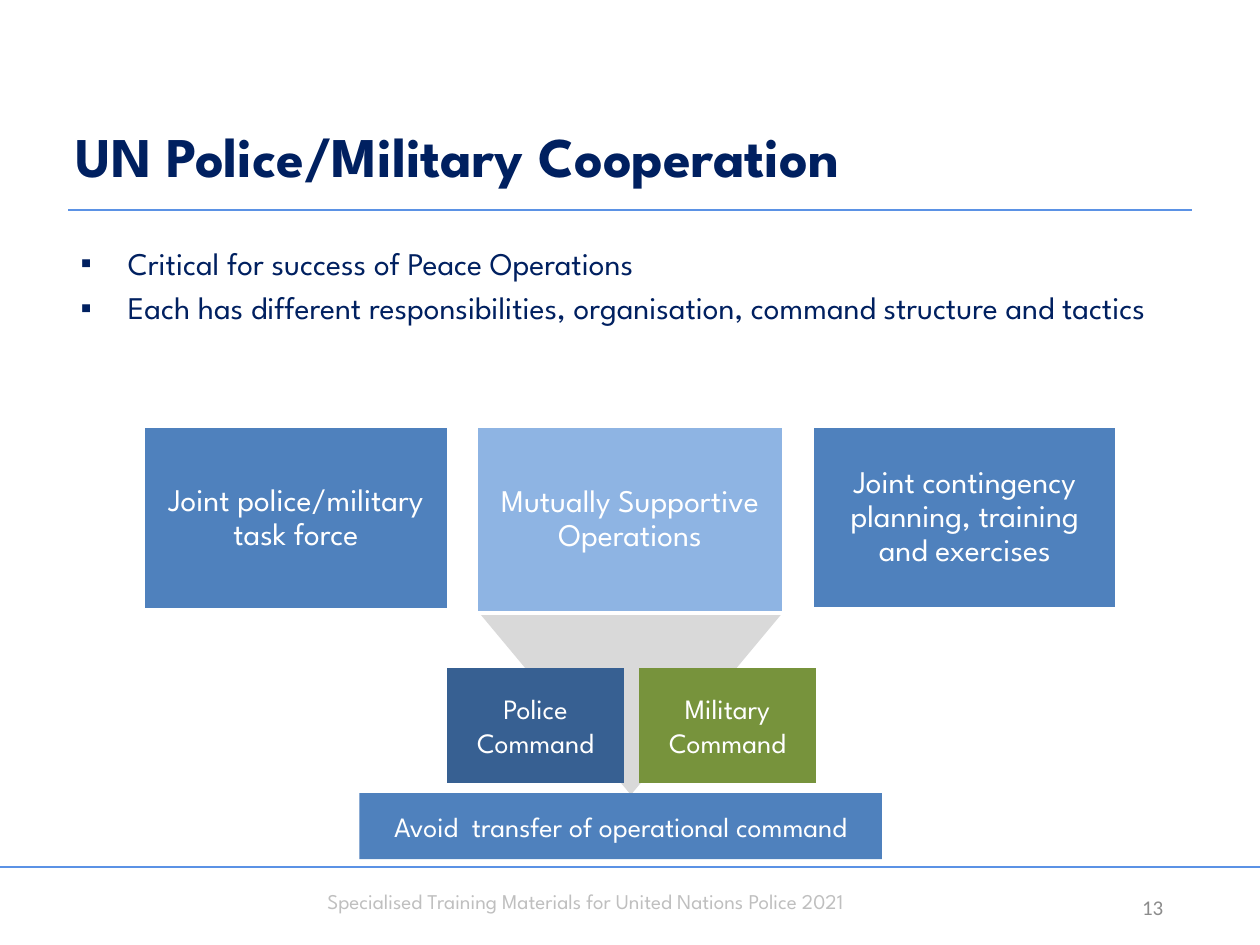
from dataclasses import dataclass

from lxml import etree
from pptx import Presentation
from pptx.dml.color import RGBColor
from pptx.enum.shapes import MSO_CONNECTOR, MSO_SHAPE
from pptx.enum.text import MSO_ANCHOR, PP_ALIGN
from pptx.oxml.ns import qn
from pptx.util import Pt

RECT, TRIANGLE = MSO_SHAPE.RECTANGLE, MSO_SHAPE.ISOSCELES_TRIANGLE
STRAIGHT = MSO_CONNECTOR.STRAIGHT
TOP, MIDDLE, BOTTOM = MSO_ANCHOR.TOP, MSO_ANCHOR.MIDDLE, MSO_ANCHOR.BOTTOM
LEFT, CENTER, RIGHT = PP_ALIGN.LEFT, PP_ALIGN.CENTER, PP_ALIGN.RIGHT


@dataclass(frozen=True)
class Theme:
    font: str = "League Spartan"
    number_font: str = "Calibri"
    navy: str = "002060"
    rule: str = "5B92E5"
    blue: str = "4F81BD"
    light_blue: str = "8EB4E3"
    dark_blue: str = "376092"
    green: str = "77933C"
    funnel: str = "D9D9D9"
    footer: str = "BFBFBF"
    number: str = "8C8C8C"
    white: str = "FFFFFF"
    title_size: float = 32
    body_size: float = 18
    command_size: float = 16
    footer_size: float = 12


@dataclass(frozen=True)
class Area:
    left: float
    top: float
    width: float
    height: float

    def lengths(self) -> tuple:
        return Pt(self.left), Pt(self.top), Pt(self.width), Pt(self.height)


@dataclass(frozen=True)
class Box:
    text: str
    area: Area
    fill: str


THEME = Theme()
BULLETS = [
    "Critical for success of Peace Operations",
    "Each has different responsibilities, organisation, command structure and tactics",
]
OPERATIONS = [
    Box("Joint police/military task force", Area(82, 243.8, 174.2, 104.4), THEME.blue),
    Box("Mutually Supportive Operations", Area(272, 243.8, 176, 106.4), THEME.light_blue),
    Box("Joint contingency planning, training and exercises",
        Area(464.2, 243.4, 174.2, 104.4), THEME.blue),
]
COMMANDS = [
    Box("Avoid  transfer of operational command", Area(205.4, 453.2, 298.6, 37.8), THEME.blue),
    Box("Police Command", Area(255.5, 381.8, 101, 65.6), THEME.dark_blue),
    Box("Military Command", Area(365.2, 381.8, 101, 65.6), THEME.green),
]


def color(code: str) -> RGBColor:
    return RGBColor.from_string(code)


def write(sp, lines: list[str], size: float, ink: str, align=LEFT,
          anchor=TOP, font: str = THEME.font) -> None:
    tf = sp.text_frame
    tf.word_wrap = True
    tf.vertical_anchor = anchor
    tf.text = "\n".join(lines)
    for p in tf.paragraphs:
        p.alignment = align
        for r in p.runs:
            r.font.name = font
            r.font.size = Pt(size)
            r.font.color.rgb = color(ink)


def add_text(slide, area: Area, lines: list[str], size: float, ink: str, **style):
    sp = slide.shapes.add_textbox(*area.lengths())
    write(sp, lines, size, ink, **style)
    return sp


def add_rule(slide, left: float, right: float, y: float) -> None:
    line = slide.shapes.add_connector(STRAIGHT, Pt(left), Pt(y), Pt(right), Pt(y))
    line.line.color.rgb = color(THEME.rule)
    line.line.width = Pt(0.75)
    etree.SubElement(line._element.spPr, qn("a:effectLst"))


def add_filled(slide, kind, area: Area, fill: str):
    sp = slide.shapes.add_shape(kind, *area.lengths())
    sp.shadow.inherit = False
    sp.fill.solid()
    sp.fill.fore_color.rgb = color(fill)
    sp.line.fill.background()
    return sp


def add_box(slide, box: Box, size: float):
    sp = add_filled(slide, RECT, box.area, box.fill)
    write(sp, [box.text], size, THEME.white, align=CENTER, anchor=MIDDLE)
    return sp


def add_operation(slide, box: Box) -> None:
    """White-edged box with even insets and tight lines."""
    sp = add_box(slide, box, THEME.body_size)
    sp.line.color.rgb = color(THEME.white)
    sp.line.width = Pt(2)
    tf = sp.text_frame
    tf.margin_left = tf.margin_right = tf.margin_top = tf.margin_bottom = Pt(6.5)
    p = tf.paragraphs[0]
    p.line_spacing = 0.9
    p.space_after = Pt(6.3)


def add_bullets(slide, area: Area, lines: list[str]) -> None:
    sp = add_text(slide, area, lines, THEME.body_size, THEME.navy)
    indent = Pt(27)
    for i, p in enumerate(sp.text_frame.paragraphs):
        if i:
            p.space_before = Pt(3.6)
        props = p._p.get_or_add_pPr()
        props.set("marL", str(indent))
        props.set("indent", str(-indent))
        etree.SubElement(props, qn("a:buFont"), typeface="Arial")
        etree.SubElement(props, qn("a:buChar"), char="▪")


def main() -> None:
    prs = Presentation()
    prs.slide_width, prs.slide_height = Pt(720), Pt(540)
    slide = prs.slides.add_slide(prs.slide_layouts[6])

    add_rule(slide, 0, 720, 495.4)
    add_text(slide, Area(180, 504, 360, 21.6),
             ["Specialised Training Materials for United Nations Police 2021"],
             THEME.footer_size, THEME.footer)
    add_rule(slide, 39, 681, 120)

    funnel = add_filled(slide, TRIANGLE, Area(273, 349.2, 175, 105), THEME.funnel)
    funnel.rotation = 180

    title = add_text(slide, Area(36, 36, 564, 75.6), ["UN Police/Military Cooperation"],
                     THEME.title_size, THEME.navy, anchor=BOTTOM)
    p = title.text_frame.paragraphs[0]
    p.line_spacing = Pt(34.4)
    p.runs[0].font.bold = True

    add_text(slide, Area(581.8, 504, 90, 28.8), ["13"], THEME.footer_size, THEME.number,
             align=RIGHT, anchor=MIDDLE, font=THEME.number_font)
    add_bullets(slide, Area(39, 136, 633, 90.7), BULLETS)

    for box in OPERATIONS:
        add_operation(slide, box)
    for box in COMMANDS:
        add_box(slide, box, THEME.command_size)

    prs.save("out.pptx")


if __name__ == "__main__":
    main()
